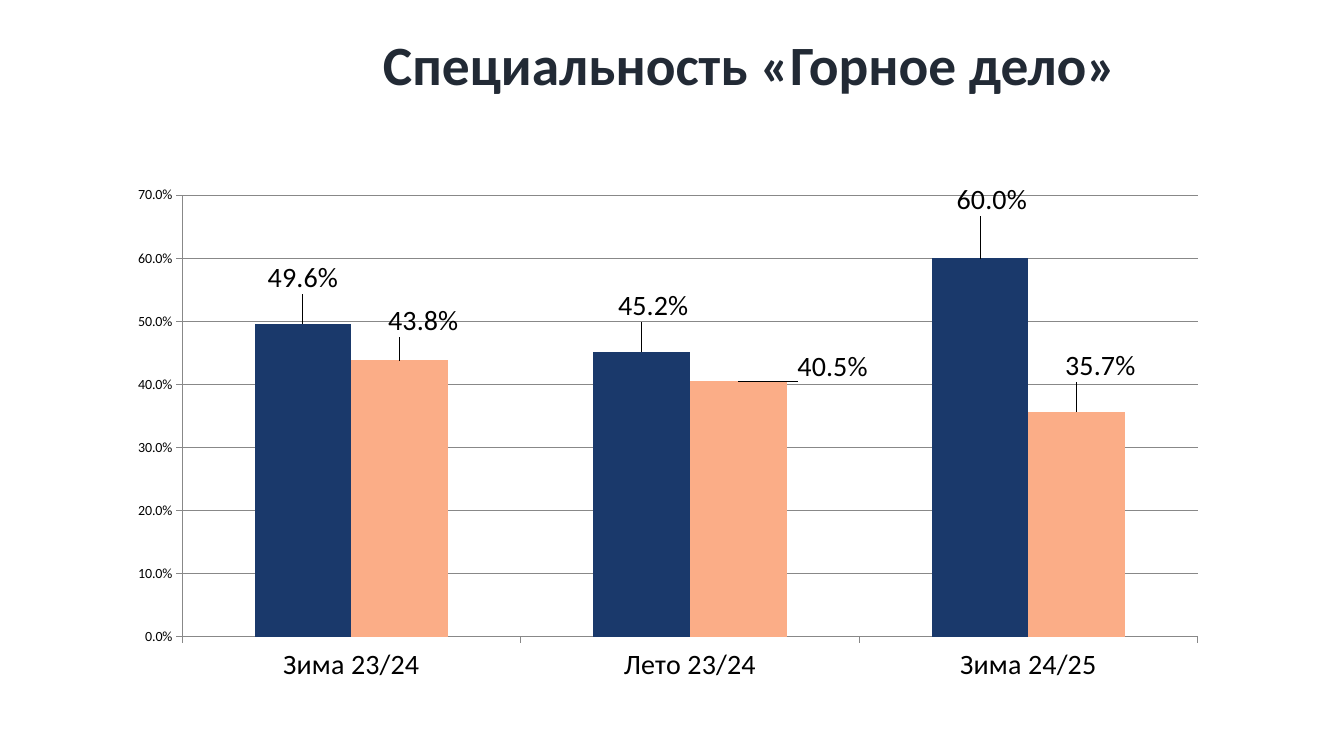
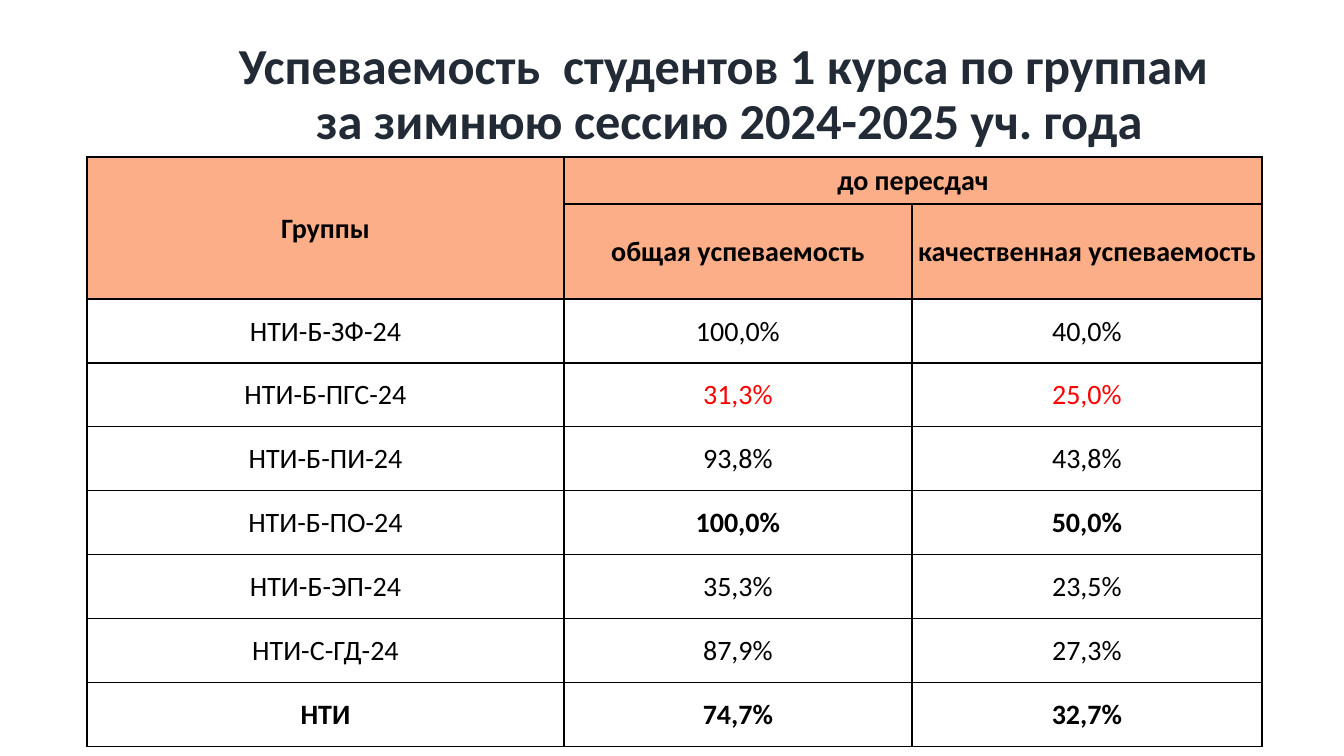
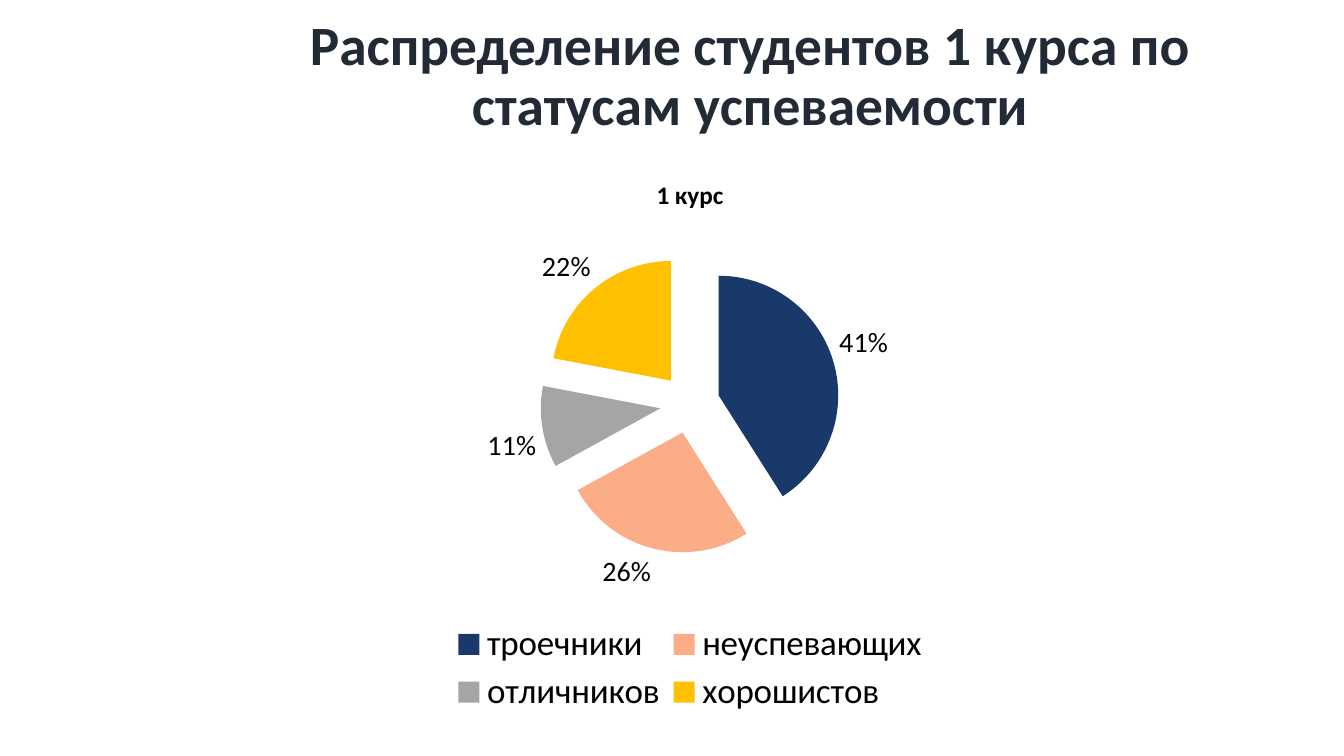
from dataclasses import dataclass
from typing import NamedTuple

from lxml import etree
from pptx import Presentation
from pptx import util as u
from pptx.chart import data as chart_data
from pptx.dml import color as dml
from pptx.enum import chart as chart_enum
from pptx.enum import text as text_enum
from pptx.oxml import ns

PX_PER_INCH = 100.8
FONT = "Calibri"
NAVY, PEACH, GREY, GOLD = "1A396B", "FBAD87", "A5A5A5", "FFC000"
HEADER_FILL = "FCAE88"
TITLE_COLOR, BLACK, RED, AXIS_GREY = "222A35", "000000", "FF0000", "888888"


class Box(NamedTuple):
    """Left, top, width and height in px."""
    left: int
    top: int
    width: int
    height: int

    def emu(self) -> list[int]:
        return [px(length) for length in self]


class Offset(NamedTuple):
    """Shift of a label from its usual place, as shares of the chart."""
    x: float
    y: float


@dataclass
class ColumnSeries:
    name: str
    values: list[float]
    color: str
    label_offsets: list[Offset]


@dataclass
class Slice:
    name: str
    share: float
    color: str


@dataclass
class GroupRow:
    group: str
    overall: str
    quality: str
    color: str = BLACK
    bold_group: bool = False
    bold_values: bool = False


SEASONS = ["Зима 23/24", "Лето 23/24", "Зима 24/25"]
COLUMN_SERIES = [
    ColumnSeries("Series 1", [0.496, 0.452, 0.6], NAVY,
                 [Offset(0, -0.04), Offset(0.01, -0.04), Offset(0.01, -0.06)]),
    ColumnSeries("Series 2", [0.438, 0.405, 0.357], PEACH,
                 [Offset(0.02, -0.03), Offset(0.08, 0.01), Offset(0.02, -0.04)]),
]
SLICES = [
    Slice("троечники", 0.41, NAVY),
    Slice("неуспевающих", 0.26, PEACH),
    Slice("отличников", 0.11, GREY),
    Slice("хорошистов", 0.22, GOLD),
]
GROUP_ROWS = [
    GroupRow("НТИ-Б-ЗФ-24", "100,0%", "40,0%"),
    GroupRow("НТИ-Б-ПГС-24", "31,3%", "25,0%", color=RED),
    GroupRow("НТИ-Б-ПИ-24", "93,8%", "43,8%"),
    GroupRow("НТИ-Б-ПО-24", "100,0%", "50,0%", bold_values=True),
    GroupRow("НТИ-Б-ЭП-24", "35,3%", "23,5%"),
    GroupRow("НТИ-С-ГД-24", "87,9%", "27,3%"),
    GroupRow("НТИ", "74,7%", "32,7%", bold_group=True, bold_values=True),
]


def px(length: int) -> int:
    return u.Inches(length / PX_PER_INCH)


def rgb(value: str) -> dml.RGBColor:
    return dml.RGBColor.from_string(value)


def set_font(font, *, size: float, color: str = BLACK, bold: bool = False) -> None:
    font.name = FONT
    font.size = u.Pt(size)
    font.bold = bold
    font.color.rgb = rgb(color)


def write_text(frame, text: str, *, size: float, color: str = BLACK,
               bold: bool = False, line_spacing: float = 1.0) -> None:
    paragraph = frame.paragraphs[0]
    paragraph.text = text
    paragraph.alignment = text_enum.PP_ALIGN.CENTER
    paragraph.line_spacing = line_spacing
    for run in paragraph.runs:
        set_font(run.font, size=size, color=color, bold=bold)


def add_title(slide, text: str, box: Box, size: float = 39.6) -> None:
    frame = slide.shapes.add_textbox(*box.emu()).text_frame
    frame.word_wrap = True
    frame.vertical_anchor = text_enum.MSO_ANCHOR.MIDDLE
    write_text(frame, text, size=size, color=TITLE_COLOR, bold=True, line_spacing=0.9)


def add_chart_child(parent, tag: str, value: object = None):
    child = etree.SubElement(parent, ns.qn(f"c:{tag}"))
    if value is not None:
        child.set("val", str(value))
    return child


def set_layout(parent, index: int, **settings: object) -> None:
    """Give a chart part a manual layout, placed as its child number index."""
    for old in parent.findall(ns.qn("c:layout")):
        parent.remove(old)
    layout = add_chart_child(parent, "layout")
    manual = add_chart_child(layout, "manualLayout")
    for tag, value in settings.items():
        add_chart_child(manual, tag, value)
    parent.insert(index, layout)


def place_plot(chart, x: float, y: float, w: float, h: float) -> None:
    plot_area = chart._chartSpace.find(".//" + ns.qn("c:plotArea"))
    set_layout(plot_area, 0, layoutTarget="inner", xMode="edge", yMode="edge",
               x=x, y=y, w=w, h=h)


def add_chart(slide, kind, box: Box, data):
    chart = slide.shapes.add_chart(kind, *box.emu(), data).chart
    set_font(chart.font, size=10)
    chart.has_title = False
    chart.has_legend = False
    return chart


def show_values(labels, number_format: str) -> None:
    labels.show_value = True
    labels.number_format = number_format
    labels.number_format_is_linked = False
    labels.position = chart_enum.XL_LABEL_POSITION.OUTSIDE_END
    set_font(labels.font, size=20)


def style_axis(axis, size: int) -> None:
    axis.major_tick_mark = chart_enum.XL_TICK_MARK.OUTSIDE
    axis.minor_tick_mark = chart_enum.XL_TICK_MARK.NONE
    set_line(axis.format.line)
    set_font(axis.tick_labels.font, size=size)


def set_line(line) -> None:
    line.color.rgb = rgb(AXIS_GREY)
    line.width = u.Pt(0.75)


def add_season_chart(slide, box: Box) -> None:
    data = chart_data.CategoryChartData(number_format="0.0%")
    data.categories = SEASONS
    for item in COLUMN_SERIES:
        data.add_series(item.name, item.values)
    chart = add_chart(slide, chart_enum.XL_CHART_TYPE.COLUMN_CLUSTERED, box, data)
    place_plot(chart, 0.1, 0.17, 0.86, 0.7)

    style_axis(chart.category_axis, 20)
    axis = chart.value_axis
    style_axis(axis, 10)
    axis.minimum_scale, axis.maximum_scale, axis.major_unit = 0, 0.7, 0.1
    axis.tick_labels.number_format = "0.0%"
    axis.tick_labels.number_format_is_linked = False
    axis.has_major_gridlines = True
    set_line(axis.major_gridlines.format.line)

    plot = chart.plots[0]
    plot.gap_width, plot.overlap = 150, 0
    plot.vary_by_categories = False
    for series, item in zip(plot.series, COLUMN_SERIES):
        series.format.fill.solid()
        series.format.fill.fore_color.rgb = rgb(item.color)
        show_values(series.data_labels, "0.0%")
        for index, offset in enumerate(item.label_offsets):
            label = series.points[index].data_label
            set_font(label.font, size=20)
            label.position = chart_enum.XL_LABEL_POSITION.OUTSIDE_END
            element = series.data_labels._element.findall(ns.qn("c:dLbl"))[index]
            set_layout(element, 1, x=offset.x, y=offset.y)


def add_status_chart(slide, box: Box) -> None:
    data = chart_data.CategoryChartData(number_format="0%")
    data.categories = [item.name for item in SLICES]
    data.add_series("Series 1", [item.share for item in SLICES])
    chart = add_chart(slide, chart_enum.XL_CHART_TYPE.PIE, box, data)
    place_plot(chart, 0.36, 0.17, 0.28, 0.54)
    write_text(chart.chart_title.text_frame, "1 курс", size=18, bold=True)

    chart.has_legend = True
    legend = chart.legend
    legend.position = chart_enum.XL_LEGEND_POSITION.BOTTOM
    legend.include_in_layout = False
    set_font(legend.font, size=25)
    set_layout(legend._element, 1, xMode="edge", yMode="edge",
               x=0.27, y=0.82, w=0.46, h=0.18)

    plot = chart.plots[0]
    plot.vary_by_categories = True
    series = plot.series[0]
    explosion = add_chart_child(series._element, "explosion", 25)
    series._element.find(ns.qn("c:tx")).addnext(explosion)
    for index, item in enumerate(SLICES):
        fill = series.points[index].format.fill
        fill.solid()
        fill.fore_color.rgb = rgb(item.color)
    show_values(series.data_labels, "0%")


def add_borders(cell) -> None:
    properties = cell._tc.get_or_add_tcPr()
    for side in ("lnL", "lnR", "lnT", "lnB"):
        line = etree.SubElement(properties, ns.qn(f"a:{side}"), w=str(u.Pt(1)))
        fill = etree.SubElement(line, ns.qn("a:solidFill"))
        etree.SubElement(fill, ns.qn("a:srgbClr"), val=BLACK)


def fill_cell(cell, text: str, *, color: str = BLACK, bold: bool = False) -> None:
    cell.vertical_anchor = text_enum.MSO_ANCHOR.MIDDLE
    write_text(cell.text_frame, text, size=20, color=color, bold=bold)


def add_group_table(slide, left: int, top: int) -> None:
    widths = [477, 348, 350]
    heights = [47, 95] + [64] * len(GROUP_ROWS)
    box = Box(left, top, sum(widths), sum(heights))
    table = slide.shapes.add_table(len(heights), len(widths), *box.emu()).table
    table.first_row = table.horz_banding = False
    for column, width in zip(table.columns, widths):
        column.width = px(width)
    for index, (row, height) in enumerate(zip(table.rows, heights)):
        row.height = px(height)
        for cell in row.cells:
            cell.margin_left = cell.margin_right = cell.margin_top = px(1)
            cell.margin_bottom = 0
            add_borders(cell)
            if index < 2:
                cell.fill.solid()
                cell.fill.fore_color.rgb = rgb(HEADER_FILL)
            else:
                cell.fill.background()

    table.cell(0, 0).merge(table.cell(1, 0))
    table.cell(0, 1).merge(table.cell(0, 2))
    headers = {(0, 0): "Группы", (0, 1): "до пересдач",
               (1, 1): "общая успеваемость", (1, 2): "качественная успеваемость"}
    for position, header in headers.items():
        fill_cell(table.cell(*position), header, bold=True)
    for index, row in enumerate(GROUP_ROWS, start=2):
        fill_cell(table.cell(index, 0), row.group, bold=row.bold_group)
        for column, value in enumerate((row.overall, row.quality), start=1):
            fill_cell(table.cell(index, column), value,
                      color=row.color, bold=row.bold_values)


def main() -> None:
    presentation = Presentation()
    presentation.slide_width, presentation.slide_height = px(1344), px(756)
    blank = presentation.slide_layouts[6]
    mining, groups, statuses = (presentation.slides.add_slide(blank) for _ in range(3))

    add_season_chart(mining, Box(64, 88, 1181, 631))
    add_title(mining, "Специальность «Горное дело»", Box(248, 25, 1004, 84))

    add_title(groups, "Успеваемость  студентов 1 курса по группам\v"
              " за зимнюю сессию 2024-2025 уч. года", Box(146, 23, 1156, 145), size=36)
    add_group_table(groups, 87, 157)

    add_title(statuses, "Распределение студентов 1 курса по статусам успеваемости",
              Box(248, 40, 1004, 75))
    add_status_chart(statuses, Box(156, 156, 1068, 563))

    presentation.save("out.pptx")


if __name__ == "__main__":
    main()
